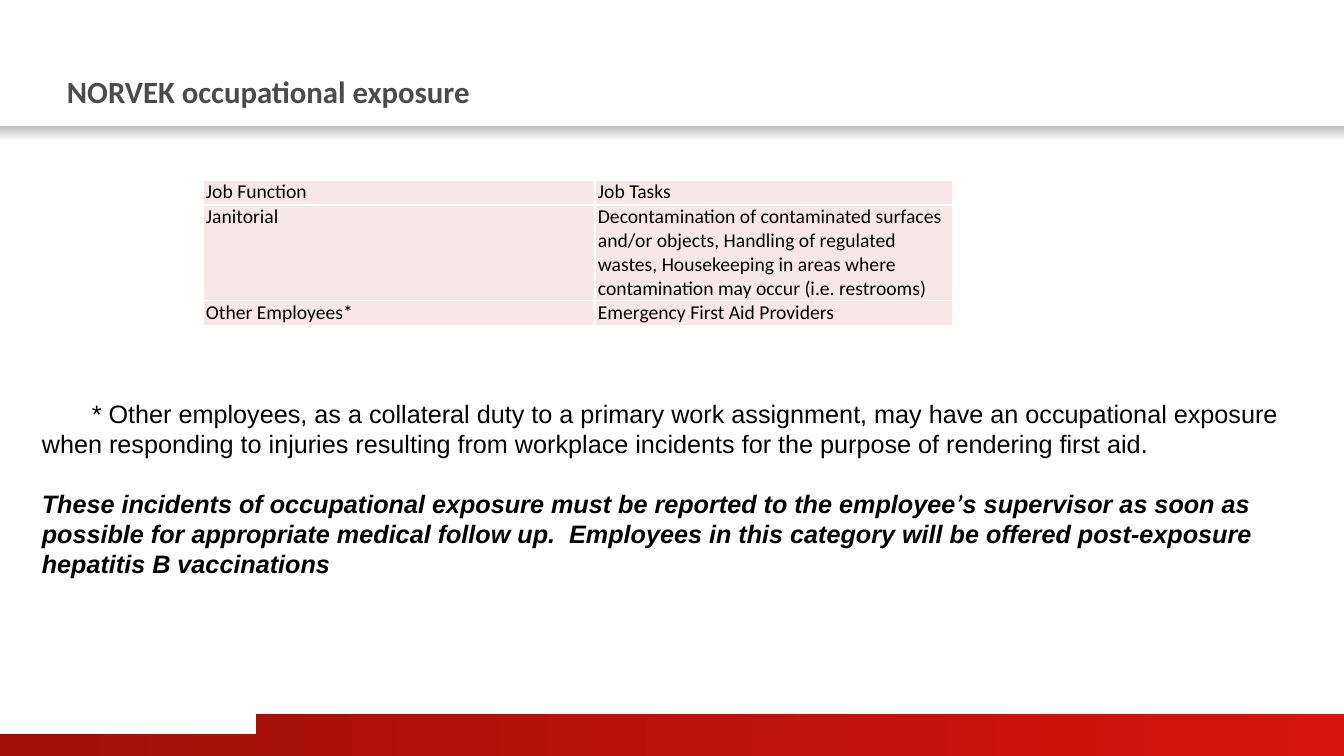
from lxml.etree import SubElement
from pptx import Presentation
from pptx.dml.color import RGBColor
from pptx.enum.shapes import MSO_SHAPE
from pptx.enum.text import MSO_ANCHOR, PP_ALIGN
from pptx.oxml.ns import qn
from pptx.util import Pt

PX = 914400 / 100.8

WHITE = RGBColor(0xFF, 0xFF, 0xFF)
BLACK = RGBColor(0x00, 0x00, 0x00)
TITLE_GREY = RGBColor(0x4B, 0x4B, 0x4B)
SHADE_GREY = RGBColor(0xBE, 0xBE, 0xBE)
DARK_RED = RGBColor(0xA0, 0x0F, 0x0A)
BRIGHT_RED = RGBColor(0xD5, 0x14, 0x0D)
CELL_PINK = RGBColor(0xF7, 0xE7, 0xE7)


def px(*lengths):
    return [round(length * PX) for length in lengths]


def add_span(para, text, size, font, color, strong=False, slanted=False):
    span = para.add_run()
    span.text = text
    span.font.size = Pt(size)
    span.font.name = font
    span.font.color.rgb = color
    span.font.bold = strong
    span.font.italic = slanted


deck = Presentation()
deck.slide_width, deck.slide_height = px(1344, 756)
page = deck.slides.add_slide(deck.slide_layouts[5])

# Bands: red footer, white notch, shade under the title
bands = [
    ((0, 714, 1344, 42), (DARK_RED, BRIGHT_RED), 0),
    ((0, 684, 256, 50), (WHITE,), 0),
    ((0, 126, 1344, 15), (SHADE_GREY, WHITE), 270),
]
for place, colors, angle in bands:
    band = page.shapes.add_shape(MSO_SHAPE.RECTANGLE, *px(*place))
    band.shadow.inherit = False
    band.line.fill.background()
    if len(colors) == 1:
        band.fill.solid()
        band.fill.fore_color.rgb = colors[0]
    else:
        band.fill.gradient()
        band.fill.gradient_angle = angle
        for stop, color, position in zip(band.fill.gradient_stops, colors, (0, 1)):
            stop.color.rgb = color
            stop.position = position

# Title
title = page.shapes.title
title.left, title.top, title.width, title.height = px(67, 25, 1210, 101)
frame = title.text_frame
frame.word_wrap = True
frame.vertical_anchor = MSO_ANCHOR.BOTTOM
frame.margin_left = frame.margin_top = frame.margin_right = 0
frame.margin_bottom = px(15)[0]
para = frame.paragraphs[0]
para.alignment = PP_ALIGN.LEFT
para.line_spacing = 0.95
add_span(para, "NORVEK occupational exposure", 22, "Calibri", TITLE_GREY, strong=True)

# Job table
jobs = [
    ("Job Function", "Job Tasks"),
    ("Janitorial", "Decontamination of contaminated surfaces and/or objects, "
     "Handling of regulated wastes, Housekeeping in areas where "
     "contamination may occur (i.e. restrooms)"),
    ("Other Employees*", "Emergency First Aid Providers"),
]
table = page.shapes.add_table(3, 2, *px(203, 180, 750, 145)).table
for column, width in zip(table.columns, px(392, 358)):
    column.width = width
for row, height, texts in zip(table.rows, px(25, 95, 25), jobs):
    row.height = height
    for cell, text in zip(row.cells, texts):
        cell.margin_left = cell.margin_right = px(3)[0]
        cell.margin_top = cell.margin_bottom = 0
        properties = cell._tc.get_or_add_tcPr()
        for side in ("lnL", "lnR", "lnT", "lnB"):
            border = SubElement(properties, qn("a:" + side), w=str(Pt(1)))
            paint = SubElement(border, qn("a:solidFill"))
            SubElement(paint, qn("a:srgbClr"), val=str(WHITE))
        cell.fill.solid()
        cell.fill.fore_color.rgb = CELL_PINK
        add_span(cell.text_frame.paragraphs[0], text, 14, "Calibri", BLACK)

# Footnote and reporting rule
box = page.shapes.add_textbox(*px(32, 393, 1295, 194))
frame = box.text_frame
frame.word_wrap = True
note = frame.paragraphs[0]
note._p.get_or_add_pPr().set("indent", str(px(50)[0]))
add_span(note, "* Other employees, as a collateral duty to a primary work assignment, "
         "may have an occupational exposure when responding to injuries resulting "
         "from workplace incidents for the purpose of rendering first aid.",
         18, "Arial", BLACK)
rule = frame.add_paragraph()
rule.space_before = Pt(21)
for text, font in [
    ("These incidents of occupational exposure must be reported to the employee", "Arial"),
    ("’", "Calibri"),
    ("s supervisor as soon as possible for appropriate medical follow up.  "
     "Employees in this category will be offered post-exposure "
     "hepatitis B vaccinations", "Arial"),
]:
    add_span(rule, text, 18, font, BLACK, strong=True, slanted=True)

deck.save("out.pptx")
